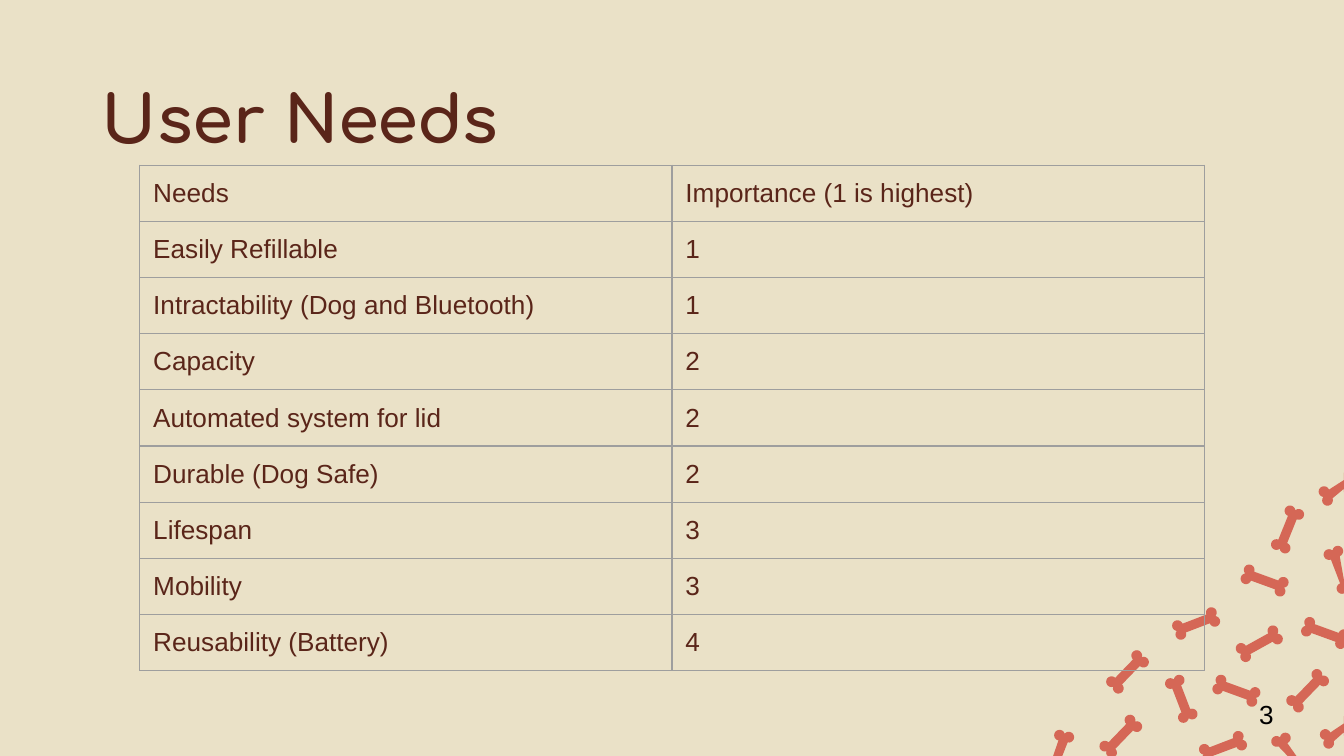
import math
from pptx import Presentation
from pptx import util as u
from pptx.dml import color
from pptx.enum import text
from pptx.oxml import parse_xml
from pptx.oxml.ns import nsdecls

BROWN, CORAL, SAND, GREY = "5A2519", "D56756", "EAE1C7", "9E9E9E"
WIDE = 10
HIGH = WIDE * 9 / 16


def tint(fill, hue):
    fill.solid()
    fill.fore_color.rgb = color.RGBColor.from_string(hue)


def write(frame, words, look):
    run = frame.paragraphs[0].add_run()
    run.text = words
    for key, val in look.items():
        if key != "hue":
            setattr(run.font, key, val)
    tint(run.font.fill, look["hue"])


deck = Presentation()
deck.slide_width, deck.slide_height = u.Inches(WIDE), u.Inches(HIGH)
slide = deck.slides.add_slide(deck.slide_layouts[6])
tint(slide.background.fill, SAND)

# Bone outline around its centre: four knobs, joined by the shaft
arc = [math.radians(a) for a in range(180, -61, -20)]
knob = [(0.135 + 0.04 * math.cos(a), 0.035 + 0.04 * math.sin(a)) for a in arc]
bone = []
for sx, sy in [(1, 1), (1, -1), (-1, -1), (-1, 1)]:
    bone += [(sx * x, sy * y) for x, y in knob[::sx * sy]]

# Bones: centre and turn, cut off at the slide's edges
bones = [
    (9.97, 4.24, 69), (9.99, 3.64, -22), (9.58, 3.94, 112), (9.41, 4.32, 20),
    (8.9, 4.64, -21), (10, 5.45, -21), (8.39, 5, -46), (9.73, 5.14, -46),
    (8.79, 5.2, 69), (9.58, 5.63, 69), (9.2, 5.14, 20), (9.86, 4.71, 20),
    (9.1, 5.56, -21), (9.37, 4.79, -29), (7.89, 5.61, 102), (8.34, 5.48, -46),
]
for cx, cy, turn in bones:
    cos, sin = math.cos(math.radians(turn)), math.sin(math.radians(turn))
    dots = [(u.Inches(min(cx + x * cos - y * sin, WIDE)),
             u.Inches(min(cy + x * sin + y * cos, HIGH))) for x, y in bone]
    path = slide.shapes.build_freeform(*dots[0])
    path.add_line_segments(dots[1:], close=True)
    shape = path.convert_to_shape()
    shape.shadow.inherit = False
    tint(shape.fill, CORAL)
    shape.line.fill.background()

# Title and page number
plain = {"name": "Arial", "size": u.Pt(14), "hue": BROWN}
title = {"name": "Comfortaa", "size": u.Pt(35), "bold": True, "hue": BROWN}
pad = {"margin_left": u.Inches(0.1), "margin_right": u.Inches(0.1),
       "margin_top": u.Inches(0.1), "margin_bottom": u.Inches(0.1)}
top, mid = text.MSO_ANCHOR.TOP, text.MSO_ANCHOR.MIDDLE
for box, words, look, hold in [
    ((0.66, 0.48, 8.69, 0.63), "User Needs", title, top),
    ((9.27, 5.1, 0.6, 0.43), "3", {**plain, "hue": "000000"}, mid),
]:
    frame = slide.shapes.add_textbox(*map(u.Inches, box)).text_frame
    for key, val in {**pad, "word_wrap": True, "vertical_anchor": hold}.items():
        setattr(frame, key, val)
    write(frame, words, look)

# Table of needs
needs = [
    ("Needs", "Importance (1 is highest)"),
    ("Easily Refillable", "1"),
    ("Intractability (Dog and Bluetooth)", "1"),
    ("Capacity", "2"),
    ("Automated system for lid", "2"),
    ("Durable (Dog Safe)", "2"),
    ("Lifespan", "3"),
    ("Mobility", "3"),
    ("Reusability (Battery)", "4"),
]
grid = slide.shapes.add_table(
    len(needs), 2, u.Inches(1.04), u.Inches(1.23),
    u.Inches(2 * 3.96), u.Inches(3.76)).table
grid.first_row = grid.horz_banding = False
for r, pair in enumerate(needs):
    for c, words in enumerate(pair):
        cell = grid.cell(r, c)
        for key, val in {**pad, "margin_bottom": u.Inches(0.06)}.items():
            setattr(cell, key, val)
        write(cell.text_frame, words, plain)
        # Borders come before the fill in the cell's XML
        for side in ("lnL", "lnR", "lnT", "lnB"):
            cell._tc.get_or_add_tcPr().append(parse_xml(
                f'<a:{side} {nsdecls("a")} w="9525"><a:solidFill>'
                f'<a:srgbClr val="{GREY}"/></a:solidFill></a:{side}>'))
        cell.fill.background()

deck.save("out.pptx")
